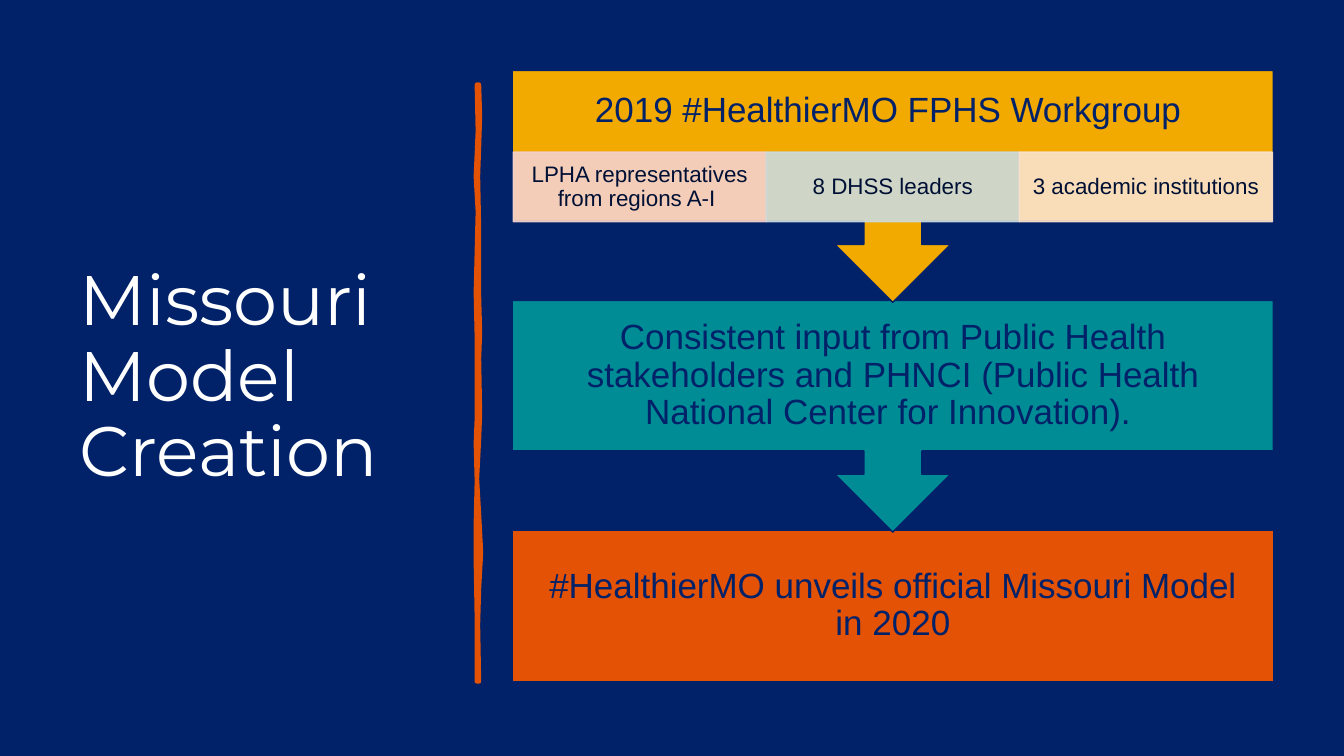
import lxml.etree
import pptx
import pptx.dml.color
import pptx.enum.shapes
import pptx.enum.text
import pptx.oxml.ns
import pptx.util

Inches = pptx.util.Inches
Pt = pptx.util.Pt
SHAPE = pptx.enum.shapes.MSO_SHAPE
ALIGN = pptx.enum.text.PP_ALIGN

COLORS = {
    "navy": "012169", "ink": "001035", "white": "FFFFFF",
    "orange": "E35205", "teal": "008C95", "gold": "F2A900",
    "pink": "F4D1CC", "gray": "CCDADD", "cream": "FAE2CC",
}


def color(name):
    return pptx.dml.color.RGBColor.from_string(COLORS[name])


def write(box, text, font, size, ink, align, insets):
    frame = box.text_frame
    frame.word_wrap = True
    frame.vertical_anchor = pptx.enum.text.MSO_ANCHOR.MIDDLE
    frame.margin_left = frame.margin_right = Inches(insets[0])
    frame.margin_top, frame.margin_bottom = Inches(insets[1]), Inches(insets[2])
    para = frame.paragraphs[0]
    para.text = text
    para.alignment = align
    para.line_spacing = 0.9
    para.font.name = font
    para.font.size = Pt(size)
    para.font.color.rgb = color(ink)


deck = pptx.Presentation()
deck.slide_width, deck.slide_height = Inches(13.33), Inches(7.5)
page = deck.slides.add_slide(deck.slide_layouts[6])
page.background.fill.solid()
page.background.fill.fore_color.rgb = color("navy")

# Title
title = page.shapes.add_textbox(Inches(0.69), Inches(0.7), Inches(3.74), Inches(6.11))
write(title, "Missouri Model Creation ", "Montserrat", 50, "white", ALIGN.LEFT, (0.1, 0.05, 0.05))

# Hand-drawn divider: down the right edge, back up the left edge
right_edge = [(4.75, 0.84), (4.76, 1.15), (4.75, 1.46), (4.74, 1.75), (4.75, 2.26),
              (4.75, 2.94), (4.76, 3.3), (4.75, 3.56), (4.76, 4.1), (4.75, 4.36),
              (4.73, 4.75), (4.75, 5.1), (4.77, 5.48), (4.75, 5.84), (4.74, 6.2), (4.75, 6.76)]
left_edge = [(4.73, 6.76), (4.73, 6.13), (4.72, 5.57), (4.72, 5.2), (4.73, 4.77),
             (4.72, 4.4), (4.73, 4.15), (4.73, 3.35), (4.72, 2.9), (4.73, 2.5),
             (4.74, 2.1), (4.72, 1.75), (4.74, 1.3), (4.73, 0.84)]
outline = [(Inches(x), Inches(y)) for x, y in right_edge + left_edge]
builder = page.shapes.build_freeform(*outline[0])
builder.add_line_segments(outline[1:], close=True)
divider = builder.convert_to_shape()
divider.shadow.inherit = False
divider.fill.solid()
divider.fill.fore_color.rgb = color("orange")
divider.line.color.rgb = color("orange")
divider.line.width = Pt(3.25)

# Three steps, the first two pointing down; gold leaves room for its member row
pad = 0.19
steps = [
    (SHAPE.RECTANGLE, 5.26, 1.5, "orange", pad,
     "#HealthierMO unveils official Missouri Model in 2020"),
    (SHAPE.DOWN_ARROW_CALLOUT, 2.98, 2.3, "teal", pad,
     "Consistent input from Public Health stakeholders and PHNCI "
     "(Public Health National Center for Innovation). "),
    (SHAPE.DOWN_ARROW_CALLOUT, 0.7, 2.3, "gold", pad + 0.69,
     "2019 #HealthierMO FPHS Workgroup "),
]
for kind, top, height, paint, bottom_pad, text in steps:
    step = page.shapes.add_shape(kind, Inches(5.08), Inches(top), Inches(7.55), Inches(height))
    step.shadow.inherit = False
    step.fill.solid()
    step.fill.fore_color.rgb = color(paint)
    step.line.color.rgb = color("navy")
    step.line.width = Pt(1)
    write(step, text, "Arial", 25, "navy", ALIGN.CENTER, (pad, pad, bottom_pad))

# Workgroup members, slightly transparent
members = [("LPHA representatives from regions A-I ", "pink"),
           ("8 DHSS leaders", "gray"),
           ("3 academic institutions ", "cream")]
width = 2.51
for column, (text, paint) in enumerate(members):
    member = page.shapes.add_shape(SHAPE.RECTANGLE, Inches(5.09 + column * width), Inches(1.51),
                                   Inches(width), Inches(0.69))
    member.shadow.inherit = False
    member.fill.solid()
    member.fill.fore_color.rgb = color(paint)
    member.line.color.rgb = color(paint)
    member.line.width = Pt(1)
    for tint in member.element.spPr.iter(pptx.oxml.ns.qn("a:srgbClr")):
        lxml.etree.SubElement(tint, pptx.oxml.ns.qn("a:alpha")).set("val", "90000")
    write(member, text, "Arial", 16, "ink", ALIGN.CENTER, (0.12, 0.02, 0.02))

deck.save("out.pptx")
